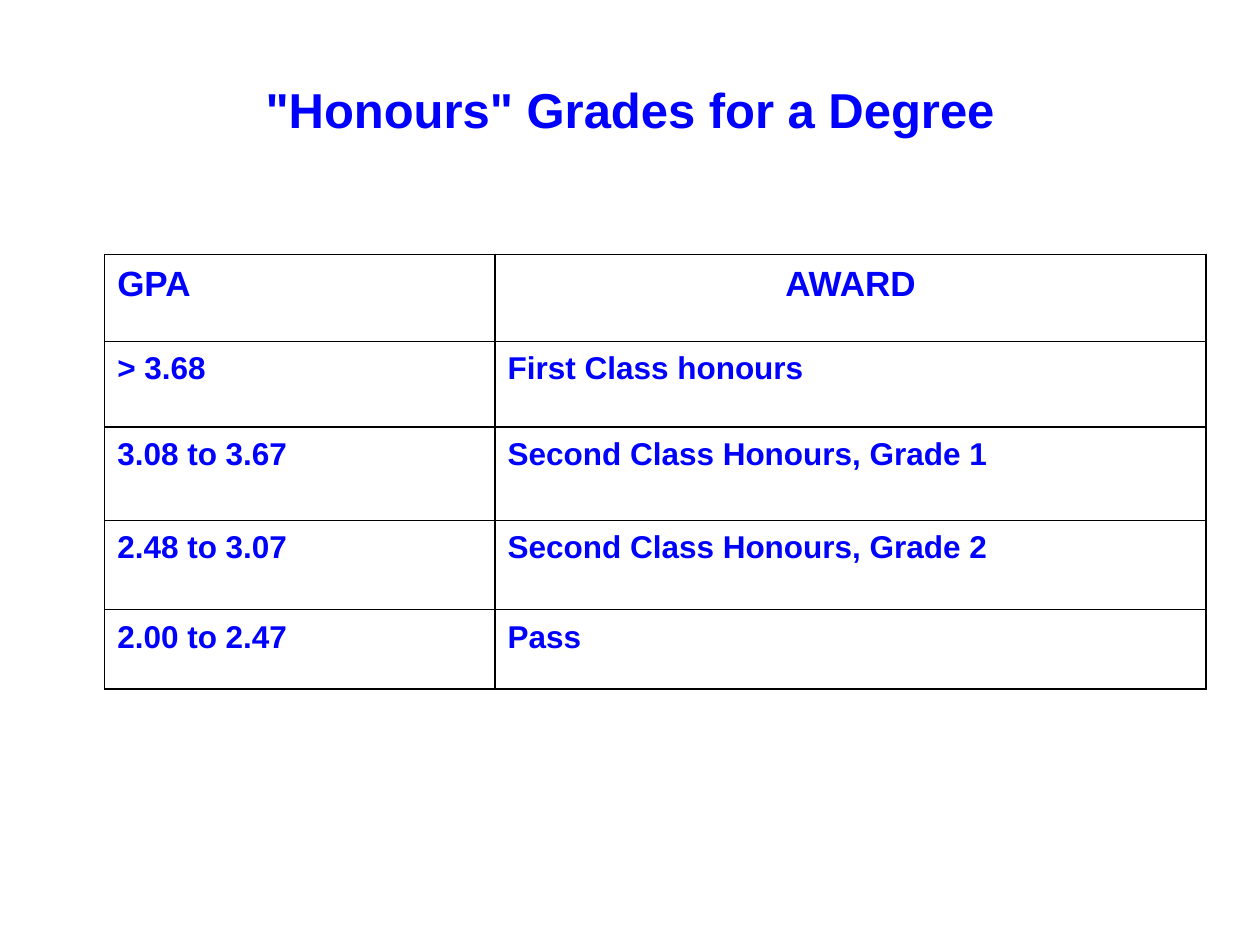
from lxml import etree
from pptx import Presentation
from pptx.dml.color import RGBColor
from pptx.enum.text import MSO_AUTO_SIZE, PP_ALIGN
from pptx.oxml.ns import qn
from pptx.util import Cm, Pt

LEFT, CENTER = PP_ALIGN.LEFT, PP_ALIGN.CENTER
FIT_SHAPE = MSO_AUTO_SIZE.SHAPE_TO_FIT_TEXT

COLORS = {"text": "0000FF", "border": "000000"}
FONT = "Arial"
TITLE = '"Honours" Grades for a Degree'
GRADES = [
    ("GPA", "AWARD"),
    ("> 3.68", "First Class honours"),
    ("3.08 to 3.67", "Second Class Honours, Grade 1"),
    ("2.48 to 3.07", "Second Class Honours, Grade 2"),
    ("2.00 to 2.47", "Pass"),
]
COLUMN_WIDTHS = [7.87, 14.33]
ROW_HEIGHTS = [1.75, 1.73, 1.88, 1.8, 1.6]


def write(para, text, size, align, spacing):
    para.text = text
    para.alignment = align
    para.line_spacing = spacing
    font = para.font
    font.name, font.size, font.bold = FONT, Pt(size), True
    font.color.rgb = RGBColor.from_string(COLORS["text"])


def add_borders(cell):
    properties = cell._tc.get_or_add_tcPr()
    for position, side in enumerate(("lnL", "lnR", "lnT", "lnB")):
        line = etree.Element(qn(f"a:{side}"), w=str(Pt(1)))
        fill = etree.SubElement(line, qn("a:solidFill"))
        etree.SubElement(fill, qn("a:srgbClr"), val=COLORS["border"])
        properties.insert(position, line)


def add_title(page):
    box = page.shapes.add_textbox(Cm(2.69), Cm(1.12), Cm(20.02), Cm(1.8))
    frame = box.text_frame
    frame.word_wrap = True
    frame.auto_size = FIT_SHAPE
    write(frame.paragraphs[0], TITLE, 28, CENTER, 1.3)


def add_grades(page):
    table = page.shapes.add_table(
        len(GRADES), len(COLUMN_WIDTHS), Cm(2.11), Cm(5.13),
        Cm(sum(COLUMN_WIDTHS)), Cm(sum(ROW_HEIGHTS))).table
    table.first_row = table.horz_banding = False
    for column, width in zip(table.columns, COLUMN_WIDTHS):
        column.width = Cm(width)
    for row, height in zip(table.rows, ROW_HEIGHTS):
        row.height = Cm(height)
    for r, texts in enumerate(GRADES):
        for c, text in enumerate(texts):
            cell = table.cell(r, c)
            cell.fill.background()
            add_borders(cell)
            align = CENTER if (r, c) == (0, 1) else LEFT
            write(cell.text_frame.paragraphs[0], text, 18 if r else 20, align, 1.1)


def main():
    deck = Presentation()
    deck.slide_width, deck.slide_height = Cm(25.4), Cm(19.05)
    page = deck.slides.add_slide(deck.slide_layouts[6])
    add_grades(page)
    add_title(page)
    deck.save("out.pptx")


if __name__ == "__main__":
    main()
